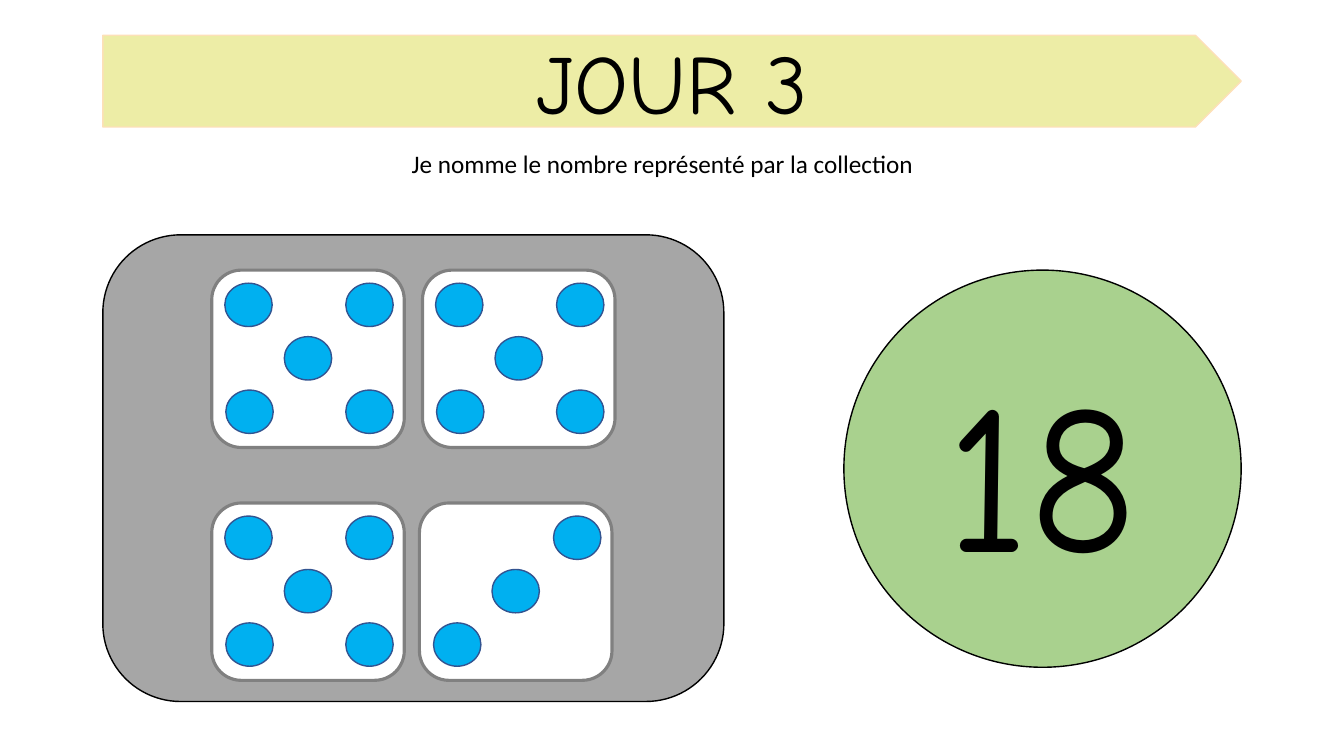
from pptx import Presentation
from pptx.dml.color import RGBColor
from pptx.enum.shapes import MSO_SHAPE
from pptx.enum.text import MSO_ANCHOR, MSO_AUTO_SIZE, PP_ALIGN
from pptx.util import Inches, Pt

PENTAGON = MSO_SHAPE.PENTAGON
ROUNDED = MSO_SHAPE.ROUNDED_RECTANGLE
OVAL = MSO_SHAPE.OVAL
CENTER = PP_ALIGN.CENTER
MIDDLE = MSO_ANCHOR.MIDDLE
FIT_SHAPE = MSO_AUTO_SIZE.SHAPE_TO_FIT_TEXT

COLORS = {
    "black": "000000",
    "banner": "EDEDA6",
    "banner_line": "FDE0B8",
    "tray": "A6A6A6",
    "answer": "A9D18E",
    "die": "FFFFFF",
    "die_line": "808080",
    "dot": "00B0F0",
    "dot_line": "325491",
}
TITLE = {"name": "Comic Neue", "size": Pt(60)}
BODY = {"name": "Calibri", "size": Pt(18)}
NUMBER = {"name": "Comic Neue", "size": Pt(150)}

DIE_SIZE = (1.91, 1.76)
DOT_SIZE = (0.47, 0.43)
DOT_OFFSETS = {
    "top_left": (0.13, 0.13),
    "top_right": (1.33, 0.13),
    "bottom_left": (0.14, 1.19),
    "bottom_right": (1.33, 1.19),
    "center": (0.72, 0.66),
}
FIVE = tuple(DOT_OFFSETS)
THREE = ("center", "top_right", "bottom_left")
DICE = [
    (2.1, 2.68, FIVE),
    (4.19, 2.68, FIVE),
    (2.1, 4.99, FIVE),
    (4.16, 4.99, THREE),
]


def color(name):
    return RGBColor.from_string(COLORS[name])


def add_shape(shapes, kind, box, fill, line, width=1):
    shape = shapes.add_shape(kind, *map(Inches, box))
    shape.shadow.inherit = False
    shape.fill.solid()
    shape.fill.fore_color.rgb = color(fill)
    shape.line.color.rgb = color(line)
    shape.line.width = Pt(width)
    return shape


def write_text(shape, text, font_format):
    shape.text_frame.word_wrap = True
    paragraph = shape.text_frame.paragraphs[0]
    paragraph.alignment = CENTER
    run = paragraph.add_run()
    run.text = text
    run.font.color.rgb = color("black")
    for attribute, value in font_format.items():
        setattr(run.font, attribute, value)


def add_text(shapes, box, text, font_format):
    text_box = shapes.add_textbox(*map(Inches, box))
    write_text(text_box, text, font_format)
    text_box.text_frame.auto_size = FIT_SHAPE


def add_banner(slide, box, text):
    left, top, width, height = box
    shapes = slide.shapes.add_group_shape().shapes
    add_shape(shapes, PENTAGON, box, "banner", "banner_line")
    add_text(shapes, (left + 1.89, top - 0.1, width - 3.78, height + 0.2), text, TITLE)


def add_die(slide, left, top, dots):
    shapes = slide.shapes.add_group_shape().shapes
    add_shape(shapes, ROUNDED, (left, top, *DIE_SIZE), "die", "die_line", 2.25)
    for dot in dots:
        across, down = DOT_OFFSETS[dot]
        add_shape(shapes, OVAL, (left + across, top + down, *DOT_SIZE), "dot", "dot_line")


def add_answer(slide, box, text):
    circle = add_shape(slide.shapes, OVAL, box, "answer", "black")
    circle.text_frame.vertical_anchor = MIDDLE
    write_text(circle, text, NUMBER)


def main():
    presentation = Presentation()
    presentation.slide_width = Inches(13.33)
    presentation.slide_height = Inches(7.5)
    slide = presentation.slides.add_slide(presentation.slide_layouts[6])
    add_banner(slide, (1.02, 0.35, 11.29, 0.91), "JOUR 3")
    add_text(slide.shapes, (2.67, 1.42, 7.8, 0.4),
             "Je nomme le nombre représenté par la collection", BODY)
    add_shape(slide.shapes, ROUNDED, (1.02, 2.33, 6.16, 4.63), "tray", "black")
    add_answer(slide, (8.37, 2.68, 3.94, 3.94), "18")
    for left, top, dots in DICE:
        add_die(slide, left, top, dots)
    presentation.save("out.pptx")


if __name__ == "__main__":
    main()
